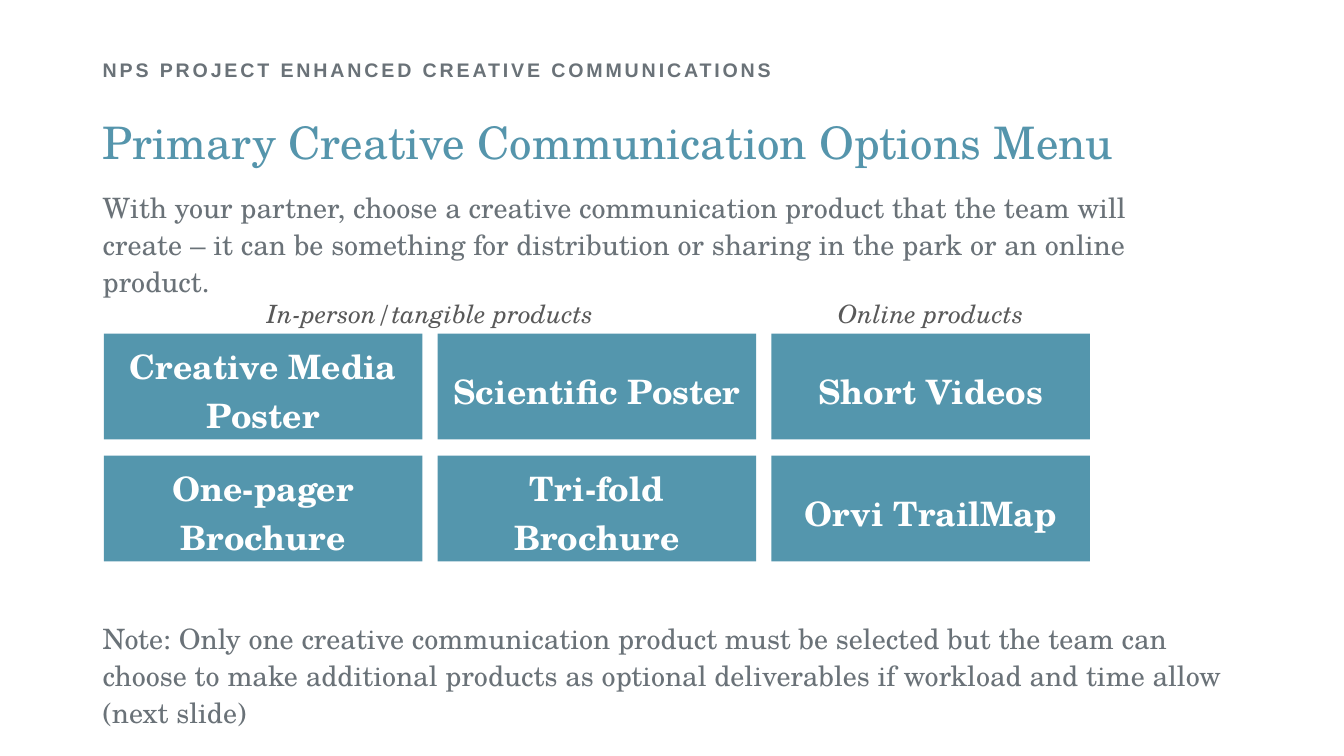
from dataclasses import dataclass

from pptx import Presentation
from pptx import util as u
from pptx.dml.color import RGBColor
from pptx.enum import shapes, text
from pptx.oxml.ns import qn

SERIF = "TeX Gyre Schola"
GREY, TEAL, BLUE, DARK, WHITE = "6A7278", "5595AC", "5496AD", "595959", "FFFFFF"
MID, TOP = text.MSO_ANCHOR.MIDDLE, text.MSO_ANCHOR.TOP
LEFT, CENTER = text.PP_ALIGN.LEFT, text.PP_ALIGN.CENTER

# Grid of product cards
GRID_X, GRID_Y = 1.03, 3.31
CARD_W, CARD_H = 3.16, 1.05
STEP_X, STEP_Y = 3.31, 1.21
PRODUCTS = [
    ["Creative Media Poster", "Scientific Poster", "Short Videos"],
    ["One-pager Brochure", "Tri-fold Brochure", "Orvi TrailMap"],
]


@dataclass
class Style:
    size: float
    color: str
    face: str = SERIF
    bold: bool = False
    italic: bool = False
    align: text.PP_ALIGN = LEFT
    anchor: text.MSO_ANCHOR = TOP
    line: float = 1.0
    after: float = 0
    track: float = 0


@dataclass
class Label:
    words: str
    x: float
    y: float
    w: float
    h: float
    style: Style


HEAD = Style(14, GREY, "Arial", bold=True, anchor=MID, line=0.9, track=2)
TITLE = Style(32, TEAL, anchor=MID)
BODY = Style(20, GREY, line=1.1, after=12)
GROUP = Style(18, DARK, italic=True, align=CENTER)
CARD = Style(24, WHITE, bold=True, align=CENTER, anchor=MID, line=1.2, after=6)

LABELS = [
    Label("NPS PROJECT ENHANCED CREATIVE COMMUNICATIONS", 0.92, 0.4, 11.5, 0.62, HEAD),
    Label("Primary Creative Communication Options Menu", 0.92, 0.95, 11.71, 0.9, TITLE),
    Label("With your partner, choose a creative communication product that the team "
          "will create – it can be something for distribution or sharing in the park "
          "or an online product.", 0.92, 1.81, 11.11, 1.12, BODY),
    Label("In-person/tangible products", GRID_X, 2.91, STEP_X + CARD_W, 0.4, GROUP),
    Label("Online products", GRID_X + 2 * STEP_X, 2.91, CARD_W, 0.4, GROUP),
    Label("Note: Only one creative communication product must be selected but the "
          "team can choose to make additional products as optional deliverables if "
          "workload and time allow (next slide)", 0.92, 6.08, 11.5, 1.05, BODY),
]


def color(code: str) -> RGBColor:
    return RGBColor.from_string(code)


def write(shape, words: str, style: Style) -> None:
    frame = shape.text_frame
    frame.word_wrap = True
    frame.vertical_anchor = style.anchor
    para = frame.paragraphs[0]
    para.text = words
    para.alignment = style.align
    para.line_spacing = style.line
    para.space_after = u.Pt(style.after)
    font = para.font
    font.name, font.size = style.face, u.Pt(style.size)
    font.bold, font.italic = style.bold, style.italic
    font.color.rgb = color(style.color)
    if style.track:
        # Letter spacing is in hundredths of a point
        props = para.runs[0]._r.get_or_add_rPr()
        props.set("spc", str(int(style.track * 100)))


def add_label(slide, label: Label) -> None:
    place = map(u.Inches, (label.x, label.y, label.w, label.h))
    write(slide.shapes.add_textbox(*place), label.words, label.style)


def add_card(slide, words: str, row: int, col: int) -> None:
    place = map(u.Inches, (GRID_X + col * STEP_X, GRID_Y + row * STEP_Y, CARD_W, CARD_H))
    card = slide.shapes.add_shape(shapes.MSO_SHAPE.RECTANGLE, *place)
    card.shadow.inherit = False
    card.fill.solid()
    card.fill.fore_color.rgb = color(BLUE)
    card.line.fill.background()
    write(card, words, CARD)


def main() -> None:
    deck = Presentation()
    deck.slide_width, deck.slide_height = u.Inches(13.33), u.Inches(7.5)
    slide = deck.slides.add_slide(deck.slide_layouts[6])

    # Headings, text and group captions
    for label in LABELS:
        add_label(slide, label)

    # Product cards
    for row, names in enumerate(PRODUCTS):
        for col, name in enumerate(names):
            add_card(slide, name, row, col)

    deck.save("out.pptx")


if __name__ == "__main__":
    main()
